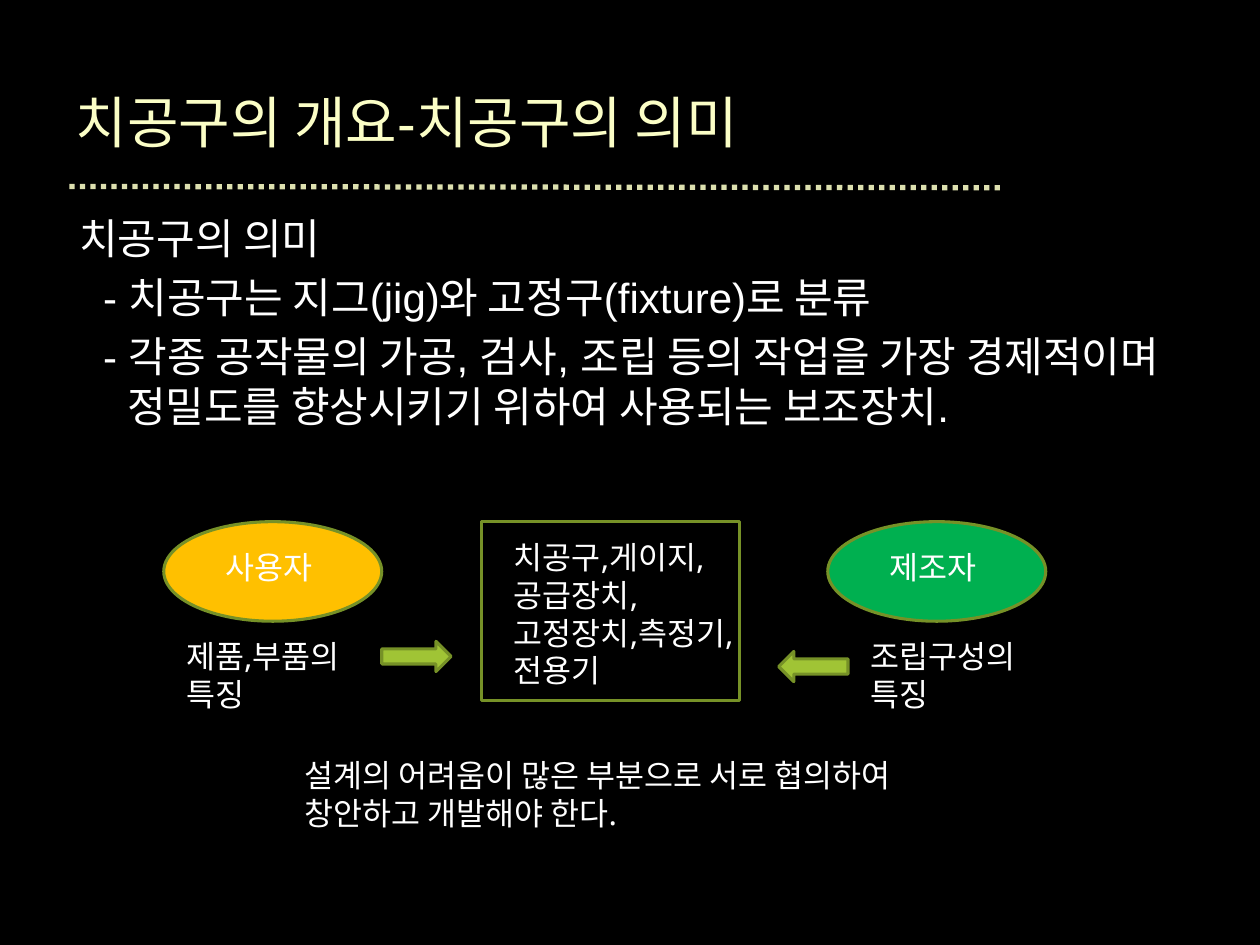
from lxml.etree import SubElement
from pptx import Presentation
from pptx.dml.color import RGBColor
from pptx.enum.dml import MSO_LINE
from pptx.enum.shapes import MSO_CONNECTOR, MSO_SHAPE
from pptx.enum.text import MSO_ANCHOR, MSO_AUTO_SIZE, PP_ALIGN
from pptx.oxml.ns import qn
from pptx.util import Inches, Pt

WHITE, GREEN, OLIVE = "FFFFFF", "A0C435", "769127"


def paint(code):
    return RGBColor.from_string(code)


def write(frame, lines, size=18, font="Noto Sans", color=WHITE,
          anchor=MSO_ANCHOR.TOP, before=0):
    """Fill a text frame with one paragraph per line."""
    frame.word_wrap = True
    frame.auto_size = MSO_AUTO_SIZE.NONE
    frame.vertical_anchor = anchor
    for i, line in enumerate(lines):
        para = frame.paragraphs[0] if i == 0 else frame.add_paragraph()
        para.alignment = PP_ALIGN.LEFT
        para.space_before = Pt(before)
        run = para.add_run()
        run.text = line
        run.font.size = Pt(size)
        run.font.name = font
        run.font.color.rgb = paint(color)


def add_text(slide, box, *lines, **style):
    frame = slide.shapes.add_textbox(*map(Inches, box)).text_frame
    write(frame, lines, **style)
    return frame


def add_form(slide, kind, box, fill=None):
    form = slide.shapes.add_shape(kind, *map(Inches, box))
    form.shadow.inherit = False
    if fill:
        form.fill.solid()
        form.fill.fore_color.rgb = paint(fill)
    else:
        form.fill.background()
    form.line.color.rgb = paint(OLIVE)
    form.line.width = Pt(1.75)


def add_rule(slide, start, end):
    rule = slide.shapes.add_connector(
        MSO_CONNECTOR.STRAIGHT, *map(Inches, start + end))
    rule.line.color.rgb = paint("DDE0AF")
    rule.line.width = Pt(3)
    rule.line.dash_style = MSO_LINE.ROUND_DOT
    SubElement(rule._element.spPr, qn("a:effectLst"))


def add_title(slide, box, text):
    title = slide.shapes.title
    title.left, title.top, title.width, title.height = map(Inches, box)
    write(title.text_frame, [text], size=32, font="Arial",
          color="FBFEC6", anchor=MSO_ANCHOR.MIDDLE)


def add_body(slide, box, *lines):
    """A heading line, then dashed lines with a hanging indent."""
    frame = add_text(slide, box, *lines, size=24, font="Arial", before=4.8)
    for para in frame.paragraphs[1:]:
        props = para._p.get_or_add_pPr()
        props.set("marL", str(Inches(0.38)))
        props.set("indent", str(Inches(-0.19)))


def add_party(slide, left, name, fill):
    add_form(slide, MSO_SHAPE.OVAL, (left, 4.14, 1.73, 0.79), fill)
    add_text(slide, (left + 0.39, 4.3, 1.02, 0.4), name)


def main():
    deck = Presentation()
    deck.slide_width, deck.slide_height = Inches(10), Inches(7.5)
    slide = deck.slides.add_slide(deck.slide_layouts[5])
    slide.background.fill.solid()
    slide.background.fill.fore_color.rgb = paint("000000")

    # Heading and definition
    add_rule(slide, (0.55, 1.48), (7.97, 1.49))
    add_title(slide, (0.5, 0.52, 6.39, 0.88), "치공구의 개요-치공구의 의미")
    add_body(slide, (0.53, 1.64, 9.11, 2.2),
             "치공구의 의미",
             "- 치공구는 지그(jig)와 고정구(fixture)로 분류",
             "- 각종 공작물의 가공, 검사, 조립 등의 작업을 가장 "
             "경제적이며 정밀도를 향상시키기 위하여 사용되는 보조장치.")

    # User and maker
    add_party(slide, 1.3, "사용자", "FFC000")
    add_party(slide, 6.57, "제조자", "00B050")
    add_text(slide, (1.38, 5.01, 1.57, 0.71), "제품,부품의 특징")
    add_text(slide, (6.81, 5.01, 1.57, 0.71), "조립구성의 특징")

    # Tools between them
    add_form(slide, MSO_SHAPE.RECTANGLE, (3.82, 4.14, 2.05, 1.42))
    add_text(slide, (3.98, 4.22, 1.97, 1.31),
             "치공구,게이지,공급장치,", "고정장치,측정기,전용기")
    add_form(slide, MSO_SHAPE.RIGHT_ARROW, (3.03, 5.09, 0.55, 0.24), GREEN)
    add_form(slide, MSO_SHAPE.LEFT_ARROW, (6.18, 5.17, 0.55, 0.24), GREEN)

    # Conclusion
    add_text(slide, (2.32, 5.95, 5.12, 0.71),
             "설계의 어려움이 많은 부분으로 서로 협의하여 창안하고 개발해야 한다.")

    deck.save("out.pptx")


if __name__ == "__main__":
    main()
